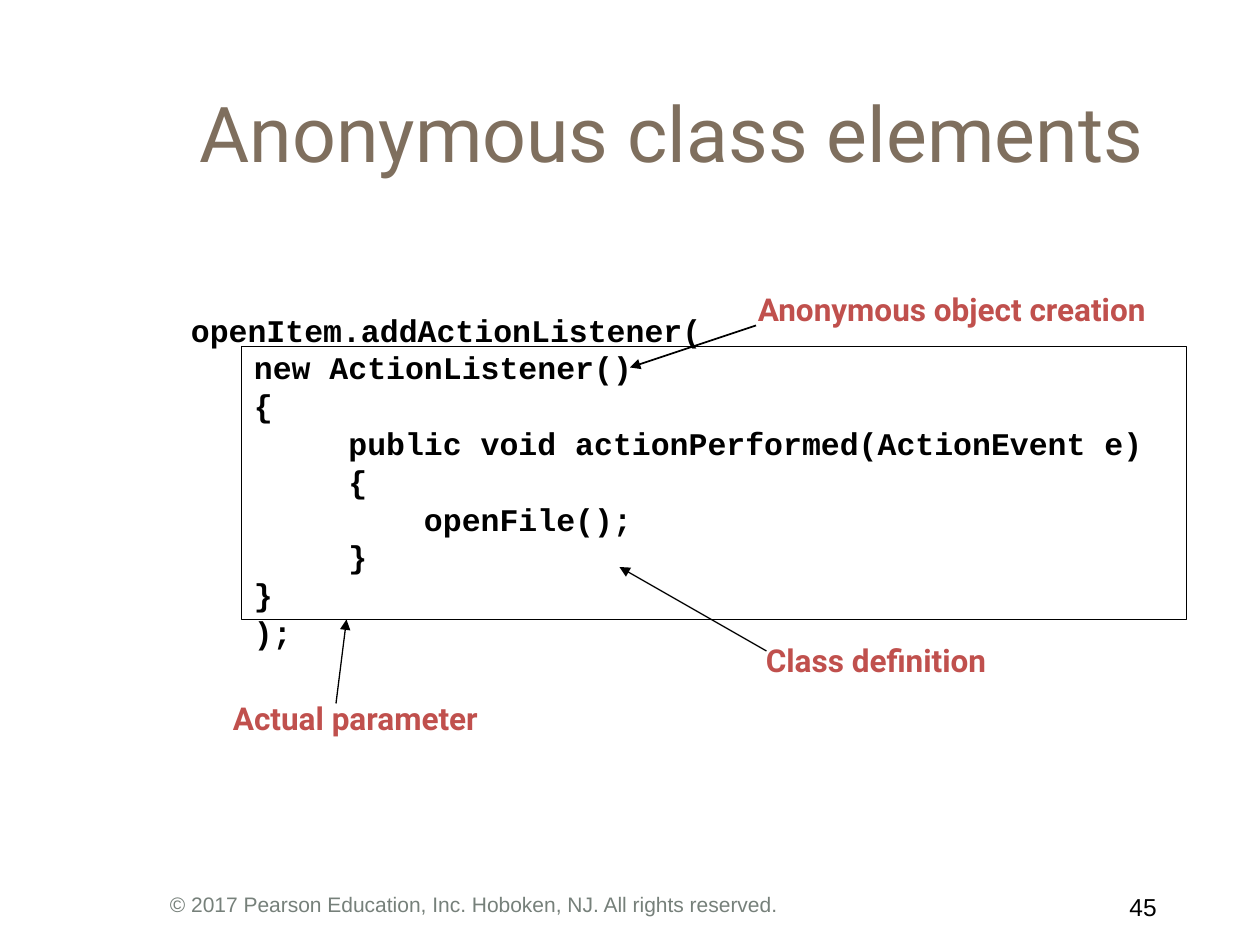
from lxml import etree
from pptx import Presentation
from pptx import util as u
from pptx.dml.color import RGBColor
from pptx.enum import shapes, text
from pptx.oxml.ns import qn

BLACK, RED, BROWN, GRAY = "000000", "C0504D", "7F6F5E", "76807A"
CODE_INDENT = 36
CODE_PITCH = 21.6
CODE = [
    "openItem.addActionListener(",
    "new ActionListener()",
    "{",
    "     public void actionPerformed(ActionEvent e)",
    "     {",
    "         openFile();",
    "     }",
    "}",
    ");",
]
# wording, left, top, width
LABELS = [
    ("Anonymous object creation", 426, 162, 248),
    ("Actual parameter", 126, 396, 163),
    ("Class definition", 430.5, 363, 145),
]
# start, end, line width
ARROWS = [
    ((432, 186), (360, 210), 1),
    ((192, 402), (198, 354), 0.75),
    ((438, 372), (354, 324), 0.75),
]


def color(hex_value):
    return RGBColor.from_string(hex_value)


def add_frame(slide, left, top, width, height, wrap=True):
    box = slide.shapes.add_textbox(u.Pt(left), u.Pt(top), u.Pt(width), u.Pt(height))
    frame = box.text_frame
    frame.word_wrap = wrap
    return frame


def add_run(paragraph, wording, font, size, hex_value, bold=False):
    run = paragraph.add_run()
    run.text = wording
    run.font.name = font
    run.font.size = u.Pt(size)
    run.font.bold = bold
    run.font.color.rgb = color(hex_value)


def add_title(slide, wording):
    frame = add_frame(slide, 78, 30, 612, 90)
    frame.vertical_anchor = text.MSO_ANCHOR.MIDDLE
    heading = frame.paragraphs[0]
    heading.alignment = text.PP_ALIGN.CENTER
    add_run(heading, wording, "Roboto", 44, BROWN)


def add_code(slide):
    """Set the listing, with every line after the call indented."""
    frame = add_frame(slide, 102, 174, 558, 201.6, wrap=False)
    for number, code_line in enumerate(CODE):
        line = frame.add_paragraph() if number else frame.paragraphs[0]
        line.line_spacing = u.Pt(CODE_PITCH)
        if number:
            properties = line._p.get_or_add_pPr()
            properties.set("marL", str(u.Pt(CODE_INDENT)))
            properties.set("indent", "0")
        add_run(line, code_line, "Courier New", 18, BLACK, bold=True)


def add_label(slide, wording, left, top, width):
    frame = add_frame(slide, left, top, width, 29.5, wrap=False)
    add_run(frame.paragraphs[0], wording, "Roboto", 18, RED, bold=True)


def add_outline(slide, left, top, width, height):
    outline = slide.shapes.add_shape(
        shapes.MSO_SHAPE.RECTANGLE, u.Pt(left), u.Pt(top), u.Pt(width), u.Pt(height))
    outline.shadow.inherit = False
    outline.fill.background()
    outline.line.color.rgb = color(BLACK)
    outline.line.width = u.Pt(1)


def add_arrow(slide, start, end, width):
    points = [u.Pt(value) for value in (*start, *end)]
    arrow = slide.shapes.add_connector(shapes.MSO_CONNECTOR.STRAIGHT, *points)
    arrow.line.color.rgb = color(BLACK)
    arrow.line.width = u.Pt(width)
    etree.SubElement(arrow.line._get_or_add_ln(), qn("a:tailEnd"), type="triangle")
    etree.SubElement(arrow._element.spPr, qn("a:effectLst"))


def add_footer(slide, copyright_line, page_number):
    notice = add_frame(slide, 90, 506, 546, 24)
    add_run(notice.paragraphs[0], copyright_line, "Arial", 12, GRAY)
    corner = add_frame(slide, 630, 506, 42, 24)
    corner.margin_right = u.Pt(11)
    number = corner.paragraphs[0]
    number.alignment = text.PP_ALIGN.RIGHT
    add_run(number, page_number, "Arial", 14, BLACK)


def main():
    deck = Presentation()
    deck.slide_width, deck.slide_height = u.Pt(720), u.Pt(540)
    slide = deck.slides.add_slide(deck.slide_layouts[6])
    add_title(slide, "Anonymous class elements")
    add_footer(
        slide, "© 2017 Pearson Education, Inc. Hoboken, NJ. All rights reserved.", "45")
    add_code(slide)
    add_outline(slide, 138, 198, 540, 156)
    for label in LABELS:
        add_label(slide, *label)
    for arrow in ARROWS:
        add_arrow(slide, *arrow)
    deck.save("out.pptx")


if __name__ == "__main__":
    main()
